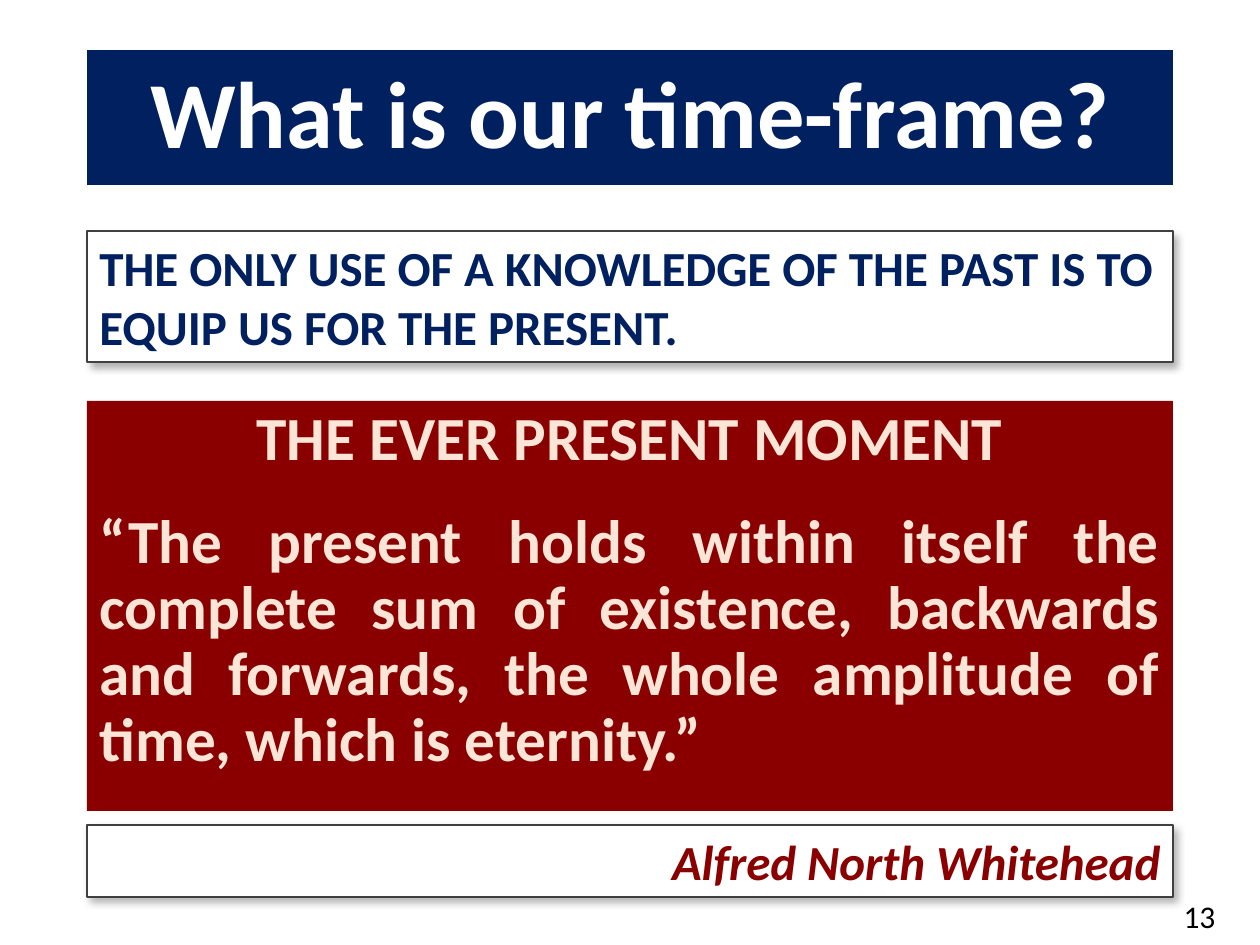
from lxml import etree
from pptx import Presentation
from pptx.dml.color import RGBColor
from pptx.enum.shapes import MSO_SHAPE
from pptx.enum.text import MSO_ANCHOR, MSO_AUTO_SIZE, PP_ALIGN
from pptx.oxml import parse_xml
from pptx.oxml.ns import nsdecls
from pptx.util import Emu, Pt

PX = 914400 // 126
LEFT, WIDTH = 87, 1086
NAVY, MAROON, PEACH, WHITE = "002060", "8A0000", "FBE5D6", "FFFFFF"
TOP, MIDDLE = MSO_ANCHOR.TOP, MSO_ANCHOR.MIDDLE
ALIGN_LEFT, CENTER, RIGHT, JUSTIFY = (
    PP_ALIGN.LEFT, PP_ALIGN.CENTER, PP_ALIGN.RIGHT, PP_ALIGN.JUSTIFY)
SHADOW = f"""<a:effectLst {nsdecls('a')}>
  <a:outerShdw blurRad="57150" dist="33020" dir="3180000" algn="tl" rotWithShape="0">
    <a:srgbClr val="000000"><a:alpha val="30000"/></a:srgbClr>
  </a:outerShdw>
</a:effectLst>"""


def rgb(value):
    return RGBColor.from_string(value)


def write(shape, lines, size, color, aligns, anchor=TOP, bold=True, italic=False):
    """Fill a shape with one paragraph per line, all in the same font."""
    frame = shape.text_frame
    frame.text = "\n".join(lines)
    frame.word_wrap = True
    frame.auto_size = MSO_AUTO_SIZE.NONE
    frame.vertical_anchor = anchor
    for paragraph, align in zip(frame.paragraphs, aligns):
        paragraph.alignment = align
        font = paragraph.runs[0].font
        font.name, font.size = "Calibri", Pt(size)
        font.bold, font.italic = bold, italic
        font.color.rgb = rgb(color)


prs = Presentation()
prs.slide_width, prs.slide_height = Emu(1260 * PX), Emu(945 * PX)
slide = prs.slides.add_slide(prs.slide_layouts[5])
shapes = slide.shapes

# Title and main quotation: plain coloured bands
title = shapes.title
quotation = shapes.add_shape(MSO_SHAPE.RECTANGLE, 0, 0, 0, 0)
quotation.shadow.inherit = False
quotation.line.fill.background()
for band, top, height, fill in ((title, 50, 135, NAVY), (quotation, 401, 410, MAROON)):
    band.left, band.top = Emu(LEFT * PX), Emu(top * PX)
    band.width, band.height = Emu(WIDTH * PX), Emu(height * PX)
    band.fill.solid()
    band.fill.fore_color.rgb = rgb(fill)

write(title, ["What is our time-frame?"], 54, WHITE, [CENTER], MIDDLE)
write(quotation,
      ["THE EVER PRESENT MOMENT",
       "“The present holds within itself the complete sum of existence, backwards "
       "and forwards, the whole amplitude of time, which is eternity.”"],
      35, PEACH, [CENTER, JUSTIFY])
for paragraph in (*title.text_frame.paragraphs, *quotation.text_frame.paragraphs):
    paragraph.line_spacing = 0.9
quotation.text_frame.paragraphs[1].space_before = Pt(21)

# Outlined white cards with a soft shadow
cards = (
    (231, 131, "THE ONLY USE OF A KNOWLEDGE OF THE PAST IS TO EQUIP US FOR THE PRESENT.",
     NAVY, ALIGN_LEFT, False),
    (825, 72, "Alfred North Whitehead", MAROON, RIGHT, True),
)
for top, height, words, color, align, italic in cards:
    card = shapes.add_textbox(Emu(LEFT * PX), Emu(top * PX), Emu(WIDTH * PX), Emu(height * PX))
    card.fill.solid()
    card.fill.fore_color.rgb = rgb(WHITE)
    card.line.color.rgb = rgb("404040")
    card.line.width = Pt(0.75)
    card._element.spPr.append(parse_xml(SHADOW))
    write(card, [words], 28, color, [align], italic=italic)

page_number = shapes.add_textbox(Emu(987 * PX), Emu(891 * PX), Emu(241 * PX), Emu(50 * PX))
write(page_number, ["13"], 18, "000000", [RIGHT], bold=False)

prs.save("out.pptx")
